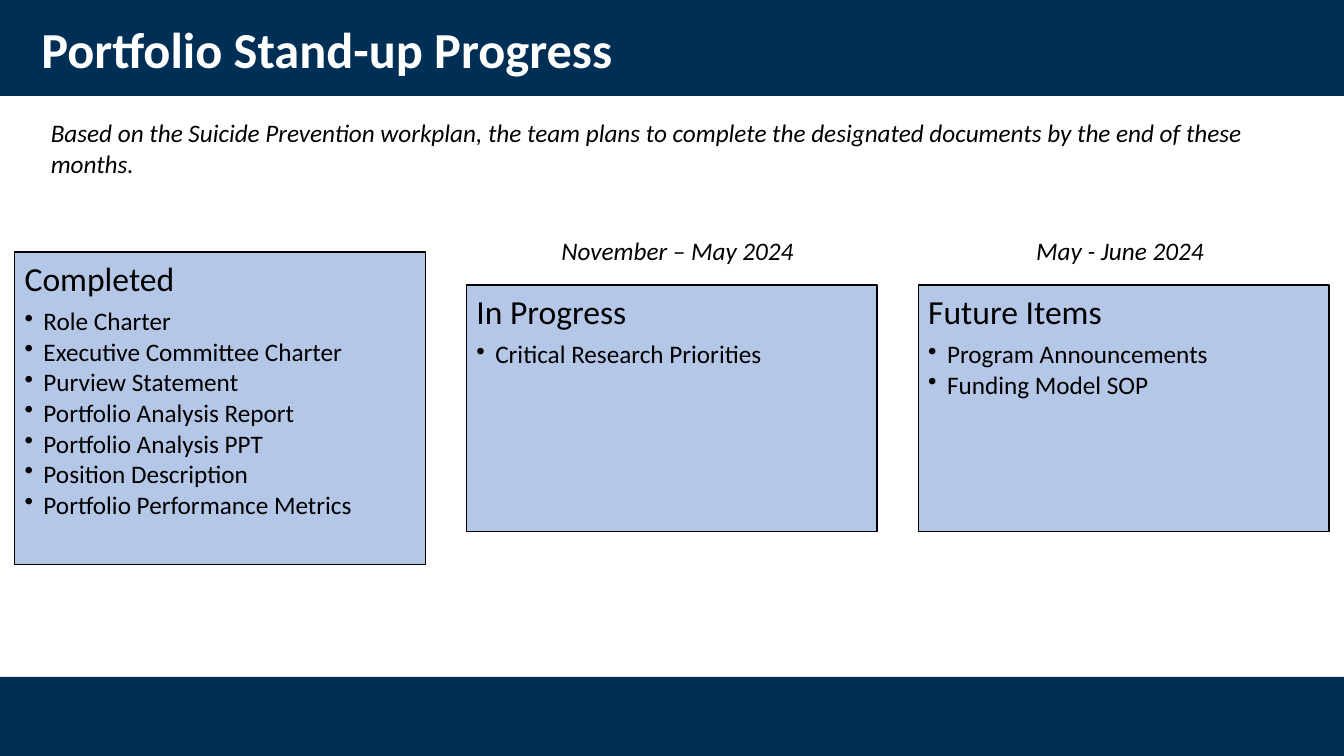
from dataclasses import dataclass

from lxml import etree
from pptx import Presentation
from pptx.dml.color import RGBColor
from pptx.enum.shapes import MSO_SHAPE
from pptx.enum.text import MSO_ANCHOR, PP_ALIGN
from pptx.oxml.ns import qn
from pptx.util import Pt

NAVY = RGBColor(0x00, 0x2F, 0x56)
PALE_BLUE = RGBColor(0xB4, 0xC7, 0xE7)
WHITE = RGBColor(0xFF, 0xFF, 0xFF)
BLACK = RGBColor(0x00, 0x00, 0x00)
FONT = "Calibri"

SLIDE_W, SLIDE_H = 960, 540
PANEL_LEFT, PANEL_STEP, PANEL_W = 10.5, 322.7, 293.3
PANEL_MID = 291.6  # shared vertical centre of the panels
PANEL_INSET = 7.2
BULLET_INDENT = 13.5


@dataclass
class Panel:
    heading: str
    items: list[str]
    height: float


@dataclass
class Label:
    text: str
    left: float
    top: float
    width: float
    height: float
    size: float = 18
    color: RGBColor = BLACK
    bold: bool = False
    italic: bool = True
    align: PP_ALIGN = PP_ALIGN.LEFT
    anchor: MSO_ANCHOR = MSO_ANCHOR.TOP
    line_spacing: float = 1.0


PANELS = [
    Panel("Completed", [
        "Role Charter",
        "Executive Committee Charter",
        "Purview Statement",
        "Portfolio Analysis Report",
        "Portfolio Analysis PPT",
        "Position Description",
        "Portfolio Performance Metrics",
    ], 223.2),
    Panel("In Progress", ["Critical Research Priorities"], 175.9),
    Panel("Future Items", ["Program Announcements", "Funding Model SOP"], 175.9),
]

LABELS = [
    Label("Portfolio Stand-up Progress", 22.5, 13, 828, 49, size=36, color=WHITE,
          bold=True, italic=False, anchor=MSO_ANCHOR.MIDDLE, line_spacing=0.9),
    Label("Based on the Suicide Prevention workplan, the team plans to complete "
          "the designated documents by the end of these months.",
          29.2, 80.6, 914.4, 51),
    Label("November – May 2024", 373.5, 164.2, 221, 29, align=PP_ALIGN.CENTER),
    Label("May - June 2024", 689.5, 164.2, 221, 29, align=PP_ALIGN.CENTER),
]


def add_rect(slide, left: float, top: float, width: float, height: float,
             fill: RGBColor):
    sp = slide.shapes.add_shape(MSO_SHAPE.RECTANGLE, Pt(left), Pt(top),
                                Pt(width), Pt(height))
    sp.shadow.inherit = False
    sp.fill.solid()
    sp.fill.fore_color.rgb = fill
    sp.line.fill.background()
    return sp


def format_run(p, size: float, color: RGBColor = BLACK, bold: bool = False,
               italic: bool = False) -> None:
    font = p.runs[0].font
    font.name, font.size = FONT, Pt(size)
    font.bold, font.italic = bold, italic
    font.color.rgb = color


def add_bullet(p) -> None:
    p_pr = p._p.get_or_add_pPr()
    p_pr.set("marL", str(Pt(BULLET_INDENT)))
    p_pr.set("indent", str(-Pt(BULLET_INDENT)))
    etree.SubElement(p_pr, qn("a:buChar")).set("char", "•")


def add_panel(slide, panel: Panel, column: int) -> None:
    sp = add_rect(slide, PANEL_LEFT + column * PANEL_STEP,
                  PANEL_MID - panel.height / 2, PANEL_W, panel.height, PALE_BLUE)
    sp.line.color.rgb = BLACK
    sp.line.width = Pt(1)
    tf = sp.text_frame
    tf.word_wrap = True
    tf.vertical_anchor = MSO_ANCHOR.TOP
    tf.margin_left = tf.margin_right = Pt(PANEL_INSET)
    tf.margin_top = tf.margin_bottom = Pt(PANEL_INSET)

    p = tf.paragraphs[0]
    p.text = panel.heading
    p.space_after = Pt(7.6)
    format_run(p, 24)
    for item in panel.items:
        p = tf.add_paragraph()
        p.text = item
        add_bullet(p)
        p.space_after = Pt(2.4)
        format_run(p, 18)
    for p in tf.paragraphs:
        p.alignment = PP_ALIGN.LEFT
        p.line_spacing = 0.9


def add_label(slide, label: Label) -> None:
    sp = slide.shapes.add_textbox(Pt(label.left), Pt(label.top),
                                  Pt(label.width), Pt(label.height))
    tf = sp.text_frame
    tf.word_wrap = True
    tf.vertical_anchor = label.anchor
    p = tf.paragraphs[0]
    p.text = label.text
    p.alignment = label.align
    p.line_spacing = label.line_spacing
    format_run(p, label.size, label.color, label.bold, label.italic)


def main() -> None:
    prs = Presentation()
    prs.slide_width, prs.slide_height = Pt(SLIDE_W), Pt(SLIDE_H)
    slide = prs.slides.add_slide(prs.slide_layouts[6])

    # Header and footer bands
    add_rect(slide, 0, 0, SLIDE_W, 68.5, NAVY)
    add_rect(slide, 0, 483.6, SLIDE_W, SLIDE_H - 483.6, NAVY)

    # Progress panels
    for column, panel in enumerate(PANELS):
        add_panel(slide, panel, column)

    # Title, introduction and dates
    for label in LABELS:
        add_label(slide, label)

    prs.save("out.pptx")


if __name__ == "__main__":
    main()
